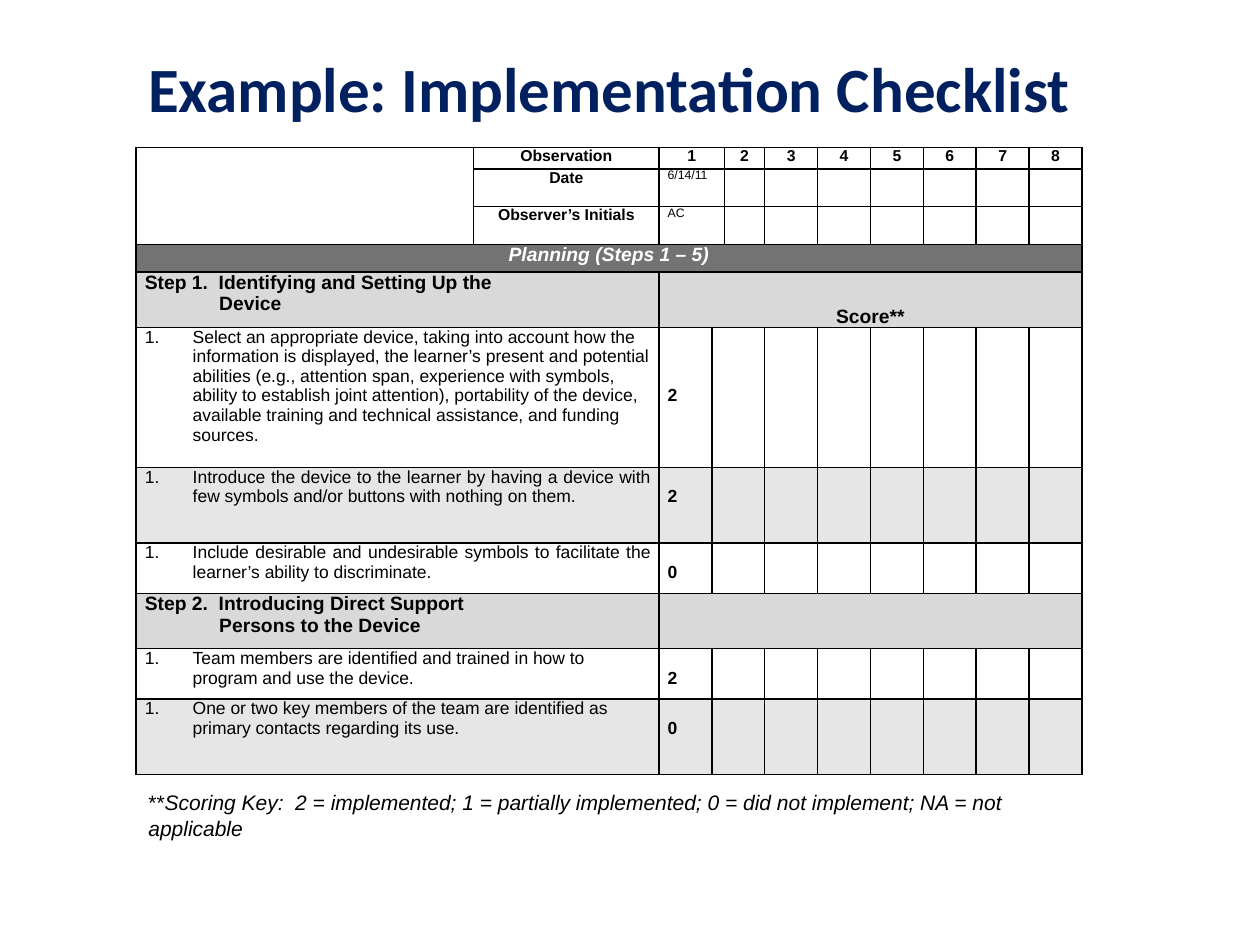
from dataclasses import dataclass
from typing import Optional

from lxml.etree import SubElement
from pptx import Presentation
from pptx.dml.color import RGBColor
from pptx.enum.text import MSO_ANCHOR as Anchor, PP_ALIGN as Align
from pptx.oxml import parse_xml
from pptx.oxml.ns import nsdecls, qn
from pptx.util import Inches, Pt

COLORS = {
    "title": "002060",
    "text": "000000",
    "light_text": "FFFFFF",
    "section": "737373",
    "step": "D9D9D9",
    "shaded": "E6E6E6",
}
COLUMN_WIDTHS = [2.68, 1.47, 0.42, 0.1, 0.32] + [0.42] * 6
ROW_HEIGHTS = [0.17, 0.3, 0.3, 0.22, 0.44, 1.11, 0.6, 0.4, 0.44, 0.4, 0.6]
LAST_COLUMN = len(COLUMN_WIDTHS) - 1
HANGING = 0.38
STEP_INDENT = 0.59
LINE_HEIGHT = 0.155


@dataclass(frozen=True)
class Style:
    size: float
    bold: bool = False
    italic: bool = False
    color: str = "text"
    font: str = "Arial"


@dataclass(frozen=True)
class Step:
    row: int
    heading: str
    continuation: str
    score_label: str = ""


@dataclass(frozen=True)
class Item:
    row: int
    text: str
    score: str
    blank_lines: int = 1
    justified: bool = False
    shaded: bool = False


TITLE = Style(36, bold=True, color="title", font="Calibri")
HEADER = Style(9, bold=True)
ENTRY = Style(7)
SECTION = Style(11, bold=True, italic=True, color="light_text")
STEP = Style(11, bold=True)
ITEM = Style(10)
SCORE = Style(10, bold=True)
KEY = Style(12)
KEY_ITALIC = Style(12, italic=True)

HEADER_ROWS = [("Observation", "1"), ("Date", "6/14/11"), ("Observer’s Initials", "AC")]
STEPS = [
    Step(4, "Step 1.  Identifying and Setting Up the", "Device", "Score**"),
    Step(8, "Step 2.  Introducing Direct Support", "Persons to the Device"),
]
ITEMS = [
    Item(5, "Select an appropriate device, taking into account how the information is displayed, "
            "the learner’s present and potential abilities (e.g., attention span, experience with "
            "symbols, ability to establish joint attention), portability of the device, available "
            "training and technical assistance, and funding sources.", "2", blank_lines=3),
    Item(6, "Introduce the device to the learner by having a device with few symbols and/or "
            "buttons with nothing on them.", "2", justified=True, shaded=True),
    Item(7, "Include desirable and undesirable symbols to facilitate the learner’s ability to "
            "discriminate.", "0", justified=True),
    Item(9, "Team members are identified and trained in how to program and use the device.", "2"),
    Item(10, "One or two key members of the team are identified as primary contacts regarding "
             "its use.", "0", shaded=True),
]


def add_run(paragraph, text: str, style: Style) -> None:
    """Append one styled run."""
    run = paragraph.add_run()
    run.text = text
    run.font.name = style.font
    run.font.size = Pt(style.size)
    run.font.bold = style.bold
    run.font.italic = style.italic
    run.font.color.rgb = RGBColor.from_string(COLORS[style.color])


def add_textbox(slide, left: float, top: float, width: float, height: float):
    """Add a wrapping text box and return its text frame."""
    frame = slide.shapes.add_textbox(
        Inches(left), Inches(top), Inches(width), Inches(height)).text_frame
    frame.word_wrap = True
    return frame


def prepare_cell(cell) -> None:
    """Clear the fill, tighten the margins and draw the cell borders."""
    cell.fill.background()
    cell.margin_left = cell.margin_right = Inches(0.07)
    cell.margin_top = cell.margin_bottom = Inches(0)
    properties = cell._tc.get_or_add_tcPr()
    for index, side in enumerate("LRTB"):
        properties.insert(index, parse_xml(
            f'<a:ln{side} {nsdecls("a")} w="{Pt(1)}"><a:solidFill>'
            f'<a:srgbClr val="{COLORS["text"]}"/></a:solidFill></a:ln{side}>'))
    SubElement(cell.text_frame.paragraphs[0]._p, qn("a:endParaRPr"), sz="900")


def fill_cell(cell, color: str) -> None:
    """Give a cell a solid fill."""
    cell.fill.solid()
    cell.fill.fore_color.rgb = RGBColor.from_string(COLORS[color])


def write_cell(cell, text: str, style: Style, align: Optional[Align] = None):
    """Write the first paragraph of a cell and return it."""
    paragraph = cell.text_frame.paragraphs[0]
    paragraph.alignment = align
    add_run(paragraph, text, style)
    return paragraph


def set_indent(paragraph, left: float, first: float = 0):
    """Set the left and first-line indents and return the properties."""
    properties = paragraph._p.get_or_add_pPr()
    properties.set("marL", str(Inches(left)))
    properties.set("indent", str(Inches(first)))
    return properties


def draw_header(table) -> None:
    """Draw the observation rows and the section band."""
    table.cell(0, 0).merge(table.cell(2, 0))
    for row, (label, entry) in enumerate(HEADER_ROWS):
        table.cell(row, 2).merge(table.cell(row, 3))
        write_cell(table.cell(row, 1), label, HEADER, Align.CENTER)
        write_cell(table.cell(row, 2), entry, ENTRY if row else HEADER,
                   None if row else Align.CENTER)
    for number in range(2, 9):
        write_cell(table.cell(0, number + 2), str(number), HEADER, Align.CENTER)
    band = table.cell(3, 0)
    band.merge(table.cell(3, LAST_COLUMN))
    fill_cell(band, "section")
    write_cell(band, "Planning (Steps 1 – 5)", SECTION, Align.CENTER)


def draw_step(table, step: Step) -> None:
    """Draw a step heading row."""
    heading, score = table.cell(step.row, 0), table.cell(step.row, 2)
    heading.merge(table.cell(step.row, 1))
    score.merge(table.cell(step.row, LAST_COLUMN))
    for cell in (heading, score):
        fill_cell(cell, "step")
    write_cell(heading, step.heading, STEP)
    continuation = heading.text_frame.add_paragraph()
    set_indent(continuation, STEP_INDENT)
    add_run(continuation, step.continuation, STEP)
    if step.score_label:
        score.vertical_anchor = Anchor.BOTTOM
        write_cell(score, step.score_label, STEP, Align.CENTER)


def draw_item(table, item: Item) -> None:
    """Draw a numbered checklist row with its score."""
    for first in (0, 3):
        table.cell(item.row, first).merge(table.cell(item.row, first + 1))
    if item.shaded:
        for column in range(LAST_COLUMN + 1):
            fill_cell(table.cell(item.row, column), "shaded")
    paragraph = write_cell(table.cell(item.row, 0), item.text, ITEM,
                           Align.JUSTIFY if item.justified else None)
    properties = set_indent(paragraph, HANGING, -HANGING)
    SubElement(properties, qn("a:buFont"), typeface="+mj-lt")
    SubElement(properties, qn("a:buAutoNum"), type="arabicPeriod")
    score = table.cell(item.row, 2)
    score.margin_top = Inches(LINE_HEIGHT * item.blank_lines)
    write_cell(score, item.score, SCORE)


def draw_table(slide) -> None:
    """Draw the checklist table."""
    table = slide.shapes.add_table(
        len(ROW_HEIGHTS), len(COLUMN_WIDTHS), Inches(1.08), Inches(1.17),
        Inches(sum(COLUMN_WIDTHS)), Inches(sum(ROW_HEIGHTS))).table
    table.first_row = table.horz_banding = False
    for column, width in zip(table.columns, COLUMN_WIDTHS):
        column.width = Inches(width)
    for row, height in zip(table.rows, ROW_HEIGHTS):
        row.height = Inches(height)
    for cell in table.iter_cells():
        prepare_cell(cell)
    draw_header(table)
    for step in STEPS:
        draw_step(table, step)
    for item in ITEMS:
        draw_item(table, item)


def main() -> None:
    """Build the checklist slide."""
    presentation = Presentation()
    presentation.slide_width, presentation.slide_height = Inches(10), Inches(7.5)
    slide = presentation.slides.add_slide(presentation.slide_layouts[6])
    title = add_textbox(slide, 0.5, 0.3, 8.67, 0.78)
    title.vertical_anchor = Anchor.MIDDLE
    title.paragraphs[0].alignment = Align.CENTER
    add_run(title.paragraphs[0], "Example: Implementation Checklist", TITLE)
    draw_table(slide)
    key = add_textbox(slide, 1.08, 6.22, 7.5, 0.51).paragraphs[0]
    add_run(key, "**", KEY)
    add_run(key, "Scoring Key:  2 = implemented; 1 = partially implemented; "
                 "0 = did not implement; NA = not applicable", KEY_ITALIC)
    presentation.save("out.pptx")


if __name__ == "__main__":
    main()
